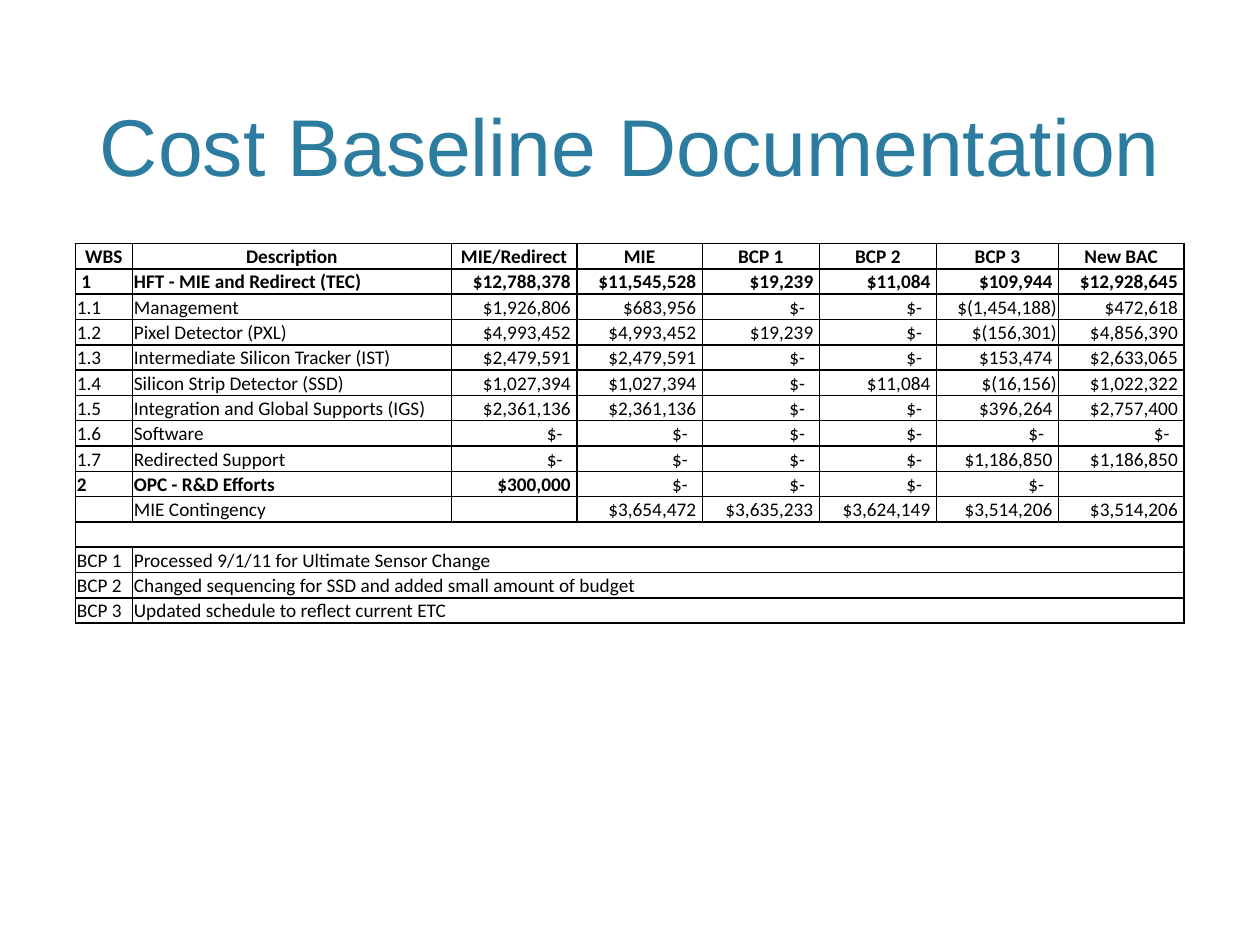
from lxml.etree import SubElement
from pptx import Presentation
from pptx.dml.color import RGBColor
from pptx.enum.text import MSO_ANCHOR as Anchor, MSO_AUTO_SIZE as AutoSize, PP_ALIGN as Align
from pptx.oxml.ns import qn
from pptx.util import Cm, Pt

TEAL = RGBColor(0x2C, 0x7C, 0x9F)
BLACK = RGBColor(0, 0, 0)
WHITE = RGBColor(0xFF, 0xFF, 0xFF)

# Content
TITLE = "Cost Baseline Documentation"
HEADER = ["WBS", "Description", "MIE/Redirect", "MIE", "BCP 1", "BCP 2", "BCP 3", "New BAC"]
COSTS = [
    ("1", "HFT - MIE and Redirect (TEC)", "$12,788,378", "$11,545,528", "$19,239", "$11,084", "$109,944", "$12,928,645"),
    ("1.1", "Management", "$1,926,806", "$683,956", "$-", "$-", "$(1,454,188)", "$472,618"),
    ("1.2", "Pixel Detector (PXL)", "$4,993,452", "$4,993,452", "$19,239", "$-", "$(156,301)", "$4,856,390"),
    ("1.3", "Intermediate Silicon Tracker (IST)", "$2,479,591", "$2,479,591", "$-", "$-", "$153,474", "$2,633,065"),
    ("1.4", "Silicon Strip Detector (SSD)", "$1,027,394", "$1,027,394", "$-", "$11,084", "$(16,156)", "$1,022,322"),
    ("1.5", "Integration and Global Supports (IGS)", "$2,361,136", "$2,361,136", "$-", "$-", "$396,264", "$2,757,400"),
    ("1.6", "Software", "$-", "$-", "$-", "$-", "$-", "$-"),
    ("1.7", "Redirected Support", "$-", "$-", "$-", "$-", "$1,186,850", "$1,186,850"),
    ("2", "OPC - R&D Efforts", "$300,000", "$-", "$-", "$-", "$-", ""),
    ("", "MIE Contingency", "", "$3,654,472", "$3,635,233", "$3,624,149", "$3,514,206", "$3,514,206"),
]
NOTES = [
    ("BCP 1", "Processed 9/1/11 for Ultimate Sensor Change"),
    ("BCP 2", "Changed sequencing for SSD and added small amount of budget"),
    ("BCP 3", "Updated schedule to reflect current ETC"),
]
ROWS = [HEADER, *COSTS, ("",), *NOTES]
BOLD_COLUMNS = {"WBS": 8, "1": 8, "2": 3}  # first cell of a row: leading bold cells

# Layout in cm
LEFT, TABLE_TOP, WIDTH = 1.52, 4.91, 22.35
ROW_HEIGHT = 0.51
COLUMN_WIDTHS = [1.15, 6.43, 2.53, 2.53, 2.36, 2.36, 2.46, 2.53]
INSET = 0.03


def set_font(font, **values):
    color = values.pop("color")
    for name, value in values.items():
        setattr(font, name, value)
    font.color.rgb = color


def add_borders(cell):
    tc_pr = cell._tc.get_or_add_tcPr()
    for side in ("a:lnL", "a:lnR", "a:lnT", "a:lnB"):
        line = SubElement(tc_pr, qn(side), w=str(Pt(1)))
        SubElement(SubElement(line, qn("a:solidFill")), qn("a:srgbClr"), val=str(BLACK))


def accounting_inset(amount):
    """Right inset that lines up digits, dashes and closing brackets."""
    if amount.endswith(")"):
        return INSET
    return 0.29 if amount == "$-" else 0.12


def fill_cell(cell, text, row, col, bold):
    is_amount = row > 0 and col > 1
    align = Align.CENTER if row == 0 else Align.RIGHT if is_amount else Align.LEFT
    formats = {
        "vertical_anchor": Anchor.BOTTOM,
        "margin_left": Cm(0.12 if text == "1" else INSET),
        "margin_right": Cm(accounting_inset(text) if is_amount else INSET),
        "margin_top": Cm(INSET),
        "margin_bottom": 0,
    }
    for name, value in formats.items():
        setattr(cell, name, value)
    cell.text = text
    p = cell.text_frame.paragraphs[0]
    p.alignment = align
    targets = [r.font for r in p.runs] or [p.font]
    for font in targets:
        set_font(font, name="Calibri", size=Pt(11), bold=bold, color=BLACK)
    if not text:
        SubElement(p._p, qn("a:endParaRPr"), sz="1100")


prs = Presentation()
prs.slide_width, prs.slide_height = Cm(25.4), Cm(19.05)
s = prs.slides.add_slide(prs.slide_layouts[5])

# Title
title = s.shapes.title
title.left, title.top, title.width, title.height = Cm(LEFT), Cm(0.3), Cm(WIDTH), Cm(3.71)
tf = title.text_frame
tf.text = TITLE
tf.auto_size = AutoSize.NONE
tf.vertical_anchor = Anchor.BOTTOM
tf.paragraphs[0].alignment = Align.CENTER
set_font(tf.paragraphs[0].runs[0].font, name="Arial", size=Pt(46), color=TEAL)

# Cost table
frame = s.shapes.add_table(len(ROWS), len(HEADER), Cm(LEFT), Cm(TABLE_TOP),
                           Cm(sum(COLUMN_WIDTHS)), Cm(ROW_HEIGHT * len(ROWS)))
table = frame.table
table.first_row = table.horz_banding = False
for column, width in zip(table.columns, COLUMN_WIDTHS):
    column.width = Cm(width)

last = len(HEADER) - 1
for i, values in enumerate(ROWS):
    table.rows[i].height = Cm(ROW_HEIGHT)
    for j in range(len(HEADER)):
        cell = table.cell(i, j)
        add_borders(cell)
        cell.fill.solid()
        cell.fill.fore_color.rgb = WHITE
        text = values[j] if j < len(values) else ""
        fill_cell(cell, text, i, j, j < BOLD_COLUMNS.get(values[0], 0))
    # A short row's final value spans the remaining columns
    if len(values) <= last:
        table.cell(i, len(values) - 1).merge(table.cell(i, last))

prs.save("out.pptx")
